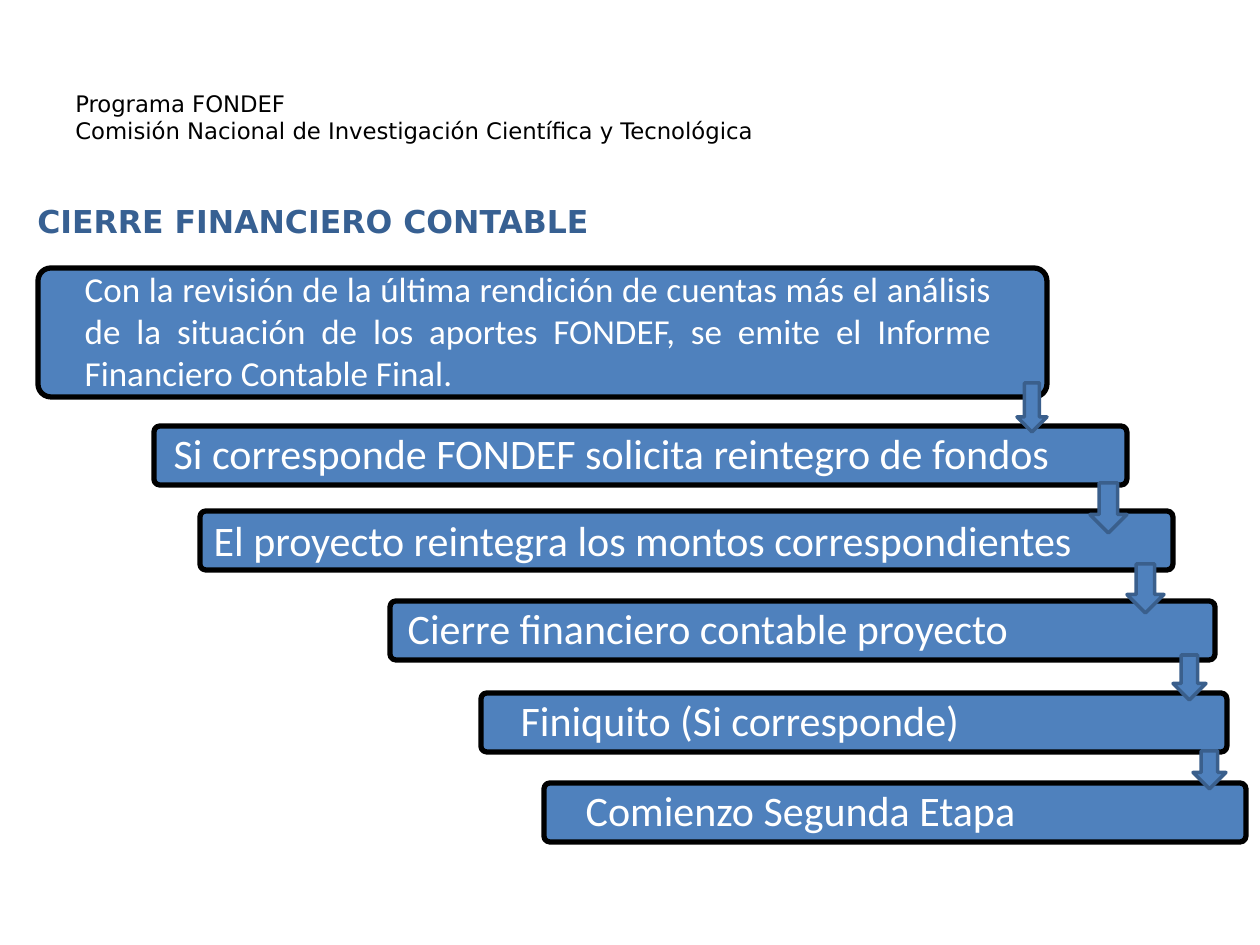
"""Build the financial closing slide: a staircase of steps joined by arrows."""
from pptx import Presentation
from pptx.dml.color import RGBColor
from pptx.enum.shapes import MSO_SHAPE
from pptx.enum.text import MSO_ANCHOR, PP_ALIGN
from pptx.util import Emu, Pt

PX = 914400 / 126
COLORS = {"step": "4F81BD", "step_edge": "000000", "arrow_edge": "3A5F8C",
          "step_text": "FFFFFF", "heading": "376092", "program": "000000"}

PROGRAM = "Programa FONDEF\vComisión Nacional de Investigación Científica y Tecnológica"
HEADING = "CIERRE FINANCIERO CONTABLE"
INTRO = ("Con la revisión de la última rendición de cuentas más el análisis de la "
         "situación de los aportes FONDEF, se emite el Informe Financiero Contable Final.")

# text, (left, top, width, height), (left, right, bottom inset), size, alignment
STEPS = [
    (INTRO, (38, 268, 1009, 129), (43, 52, 0), 20, PP_ALIGN.JUSTIFY),
    ("Si corresponde FONDEF solicita reintegro de fondos",
     (154, 426, 973, 59), (18, 0, 5), 24, PP_ALIGN.LEFT),
    ("El proyecto reintegra los montos correspondientes",
     (200, 511, 973, 59), (12, 0, 3), 24, PP_ALIGN.LEFT),
    ("Cierre financiero contable proyecto",
     (390, 601, 825, 59), (16, 0, 5), 24, PP_ALIGN.LEFT),
    ("Finiquito (Si corresponde)",
     (481, 693, 746, 59), (38, 0, 5), 24, PP_ALIGN.LEFT),
    ("Comienzo Segunda Etapa",
     (544, 783, 702, 59), (40, 0, 5), 24, PP_ALIGN.LEFT),
]
ARROWS = [(1017, 383, 30, 49), (1090, 483, 37, 50), (1127, 564, 37, 49),
          (1173, 655, 33, 45), (1193, 751, 33, 38)]


def px(length):
    return Emu(round(length * PX))


def color(name):
    return RGBColor.from_string(COLORS[name])


def write(frame, text, font_name, size, color_name, bold=False,
          align=PP_ALIGN.LEFT, anchor=MSO_ANCHOR.MIDDLE):
    frame.text = text
    frame.vertical_anchor = anchor
    paragraph = frame.paragraphs[0]
    paragraph.alignment = align
    for run in paragraph.runs:
        run.font.name = font_name
        run.font.size = Pt(size)
        run.font.bold = bold
        run.font.color.rgb = color(color_name)


def add_block(slide, preset, box, edge, edge_width):
    block = slide.shapes.add_shape(preset, *map(px, box))
    block.shadow.inherit = False
    block.fill.solid()
    block.fill.fore_color.rgb = color("step")
    block.line.color.rgb = color(edge)
    block.line.width = Pt(edge_width)
    return block


def add_step(slide, text, box, insets, size, align):
    step = add_block(slide, MSO_SHAPE.ROUNDED_RECTANGLE, box, "step_edge", 3)
    step.adjustments[0] = 0.1
    frame = step.text_frame
    frame.word_wrap = True
    frame.margin_left, frame.margin_right, frame.margin_bottom = map(px, insets)
    frame.margin_top = 0
    write(frame, text, "Calibri", size, "step_text", align=align,
          anchor=MSO_ANCHOR.BOTTOM)


def add_label(slide, text, box, size, color_name, bold=False, wrap=True):
    label = slide.shapes.add_textbox(*map(px, box))
    label.text_frame.word_wrap = wrap
    write(label.text_frame, text, "DejaVu Sans", size, color_name, bold)


def main():
    deck = Presentation()
    deck.slide_width, deck.slide_height = px(1260), px(945)
    slide = deck.slides.add_slide(deck.slide_layouts[6])
    for step in STEPS:
        add_step(slide, *step)
    add_label(slide, HEADING, (25, 196, 601, 50), 18, "heading", bold=True, wrap=False)
    add_label(slide, PROGRAM, (63, 38, 984, 158), 13, "program")
    for box in ARROWS:
        add_block(slide, MSO_SHAPE.DOWN_ARROW, box, "arrow_edge", 2)
    deck.save("out.pptx")


if __name__ == "__main__":
    main()
